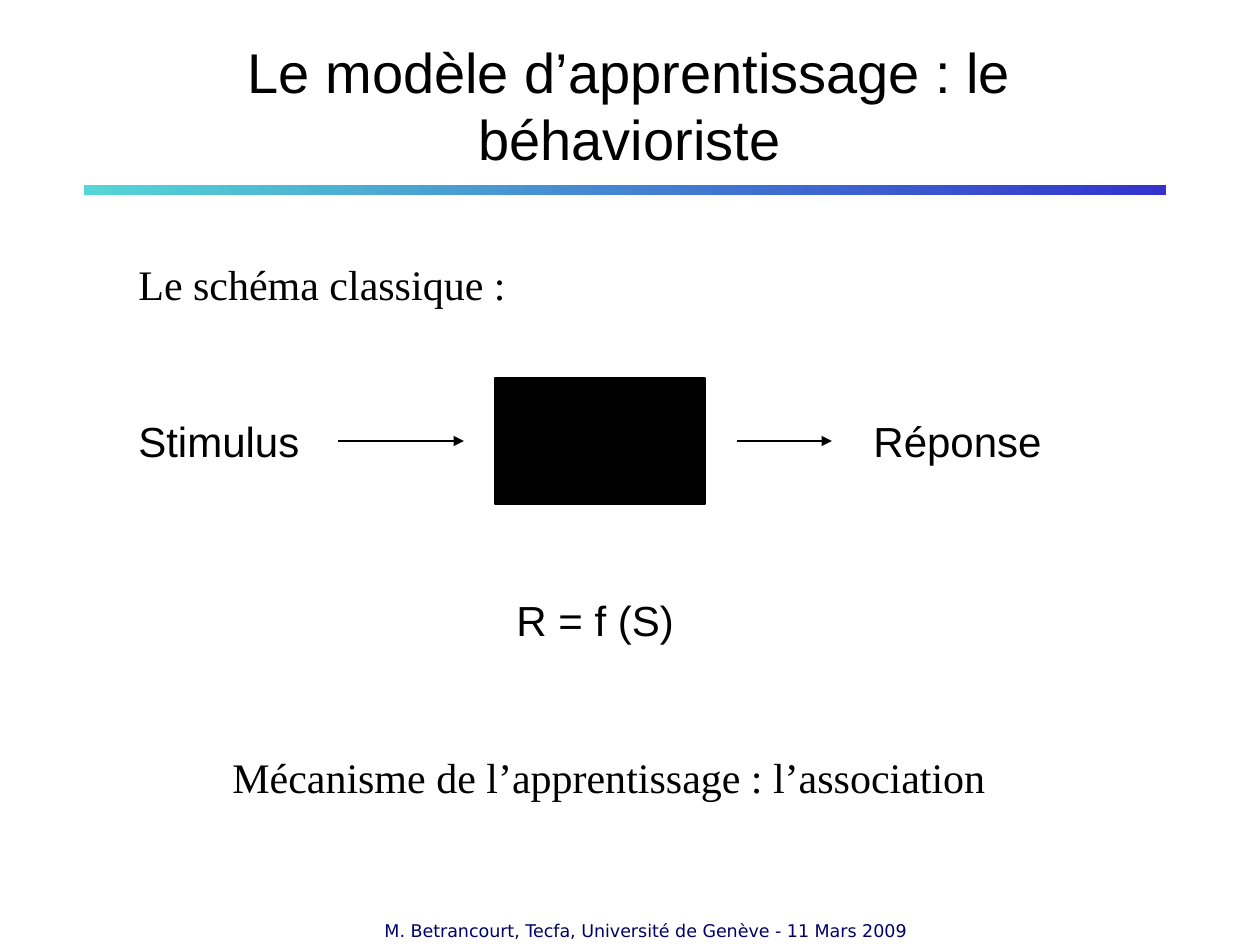
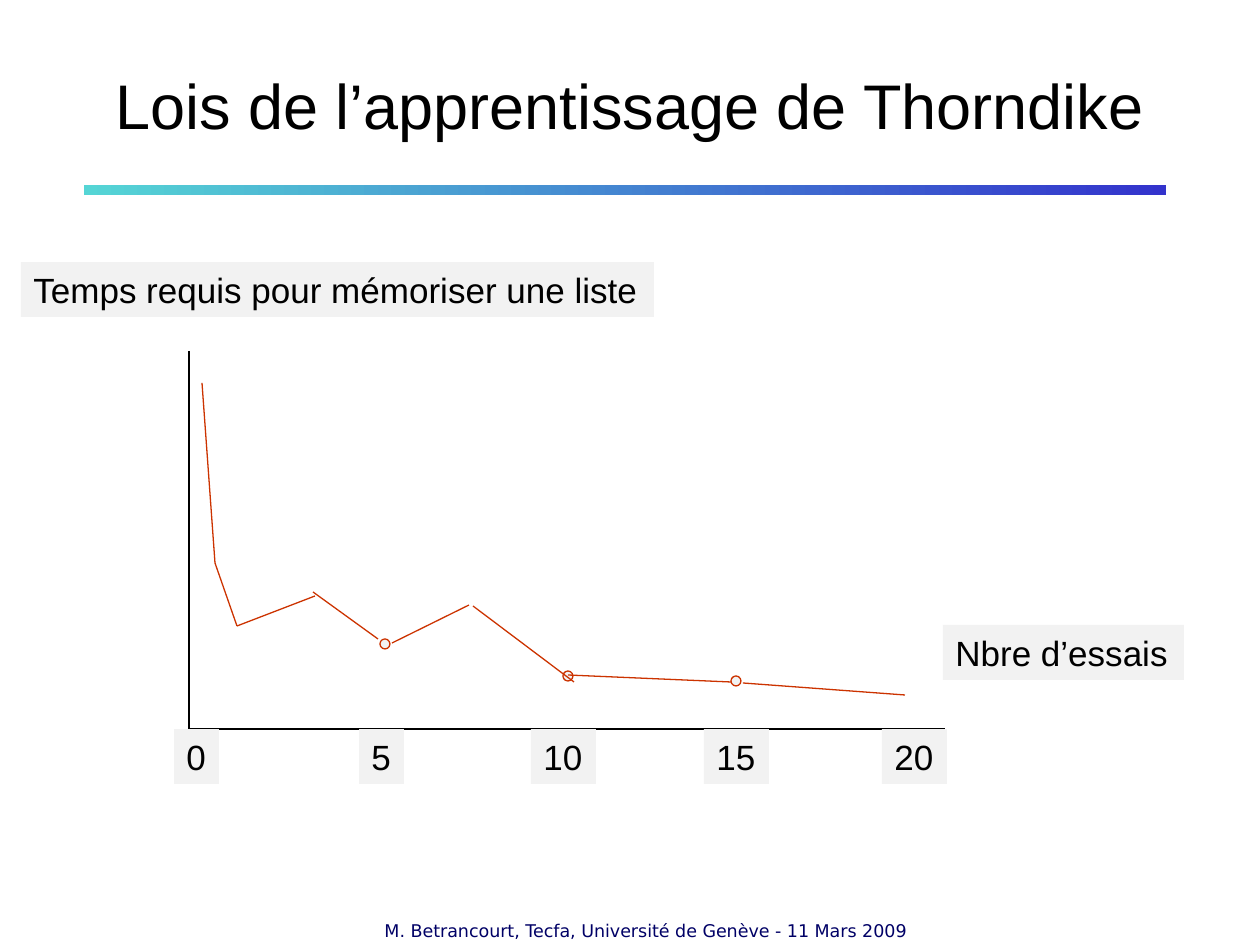
"""Build two slides on the behaviourist model of learning and Thorndike's curve."""
from dataclasses import dataclass

from lxml.etree import SubElement
from pptx import Presentation
from pptx.dml.color import RGBColor
from pptx.enum.shapes import MSO_CONNECTOR as Connector, MSO_SHAPE as Shape
from pptx.enum.text import MSO_ANCHOR as Anchor, MSO_AUTO_SIZE as AutoSize, PP_ALIGN as Align
from pptx.oxml.ns import qn
from pptx.util import Emu, Pt


@dataclass(frozen=True)
class Theme:
    """Colours, fonts and type sizes."""
    ink: str = "000000"
    footer_ink: str = "000066"
    band_start: str = "55D5D5"
    band_end: str = "3333CC"
    label_fill: str = "F2F2F2"
    curve: str = "CC3300"
    sans: str = "Arial"
    serif: str = "Times New Roman"
    footer_font: str = "DejaVu Sans"
    body_size: int = 24
    label_size: int = 20
    footer_size: int = 10
    line_width: float = 0.75


THEME = Theme()
PX_PER_INCH = 126
SLIDE_SIZE = (1260, 945)

FOOTER = "M. Betrancourt, Tecfa, Université de Genève - 11 Mars 2009"
FOOTER_BOX = (357, 914, 577, 53)
TITLE_BOX = (94, 26, 1071, 157)
BAND_BOX = (84, 185, 1082, 10)

MODEL_TITLE = ("Le modèle d’apprentissage : le béhavioriste", 32)
MODEL_TEXTS = [
    ("Le schéma classique :", (126, 252, 400, 63), THEME.serif),
    ("Stimulus", (126, 409, 190, 63), THEME.sans),
    ("Réponse", (861, 409, 198, 63), THEME.sans),
    ("R = f (S)", (504, 588, 187, 63), THEME.sans),
    ("Mécanisme de l’apprentissage : l’association", (220, 745, 792, 63), THEME.serif),
]
BLACK_BOX = (495, 378, 210, 126)
MODEL_ARROWS = [((338, 441), (464, 441)), ((737, 441), (832, 441))]

LAW_TITLE = ("Lois de l’apprentissage de Thorndike", 36)
ORIGIN, AXIS_TOP, AXIS_RIGHT = (189, 729), (189, 351), (945, 729)
LABEL_HEIGHT = 55
AXIS_TITLES = [
    ("Temps requis pour mémoriser une liste", (21, 262, 633, LABEL_HEIGHT)),
    ("Nbre d’essais", (943, 625, 241, LABEL_HEIGHT)),
]
TICKS = [("0", 174), ("5", 359), ("10", 531), ("15", 704), ("20", 882)]
TICK_WIDTHS = {1: 45, 2: 65}
RING_SIZE = 10
TRIAL_RINGS = [(385, 644), (568, 676), (736, 681)]
CURVE_STROKES = [
    [(202, 383), (215, 563), (237, 626), (315, 596)],
    [(313, 592), (378, 639)],
    [(392, 643), (469, 605)],
    [(473, 606), (574, 682)],
    [(568, 675), (731, 682)],
    [(743, 683), (905, 695)],
]


def px(*lengths):
    """Turn pixels into EMU."""
    return [Emu(round(length * 914400 / PX_PER_INCH)) for length in lengths]


def rgb(colour):
    """Turn a hex string into a colour."""
    return RGBColor.from_string(colour)


def add_text(slide, text, box, size, font=THEME.sans, colour=THEME.ink,
             align=Align.LEFT, wrap=False, anchor=Anchor.TOP):
    """Add a one-paragraph text box that grows unless it wraps."""
    shape = slide.shapes.add_textbox(*px(*box))
    frame = shape.text_frame
    frame.word_wrap = wrap
    frame.auto_size = AutoSize.NONE if wrap else AutoSize.SHAPE_TO_FIT_TEXT
    frame.vertical_anchor = anchor
    paragraph = frame.paragraphs[0]
    paragraph.text = text
    paragraph.alignment = align
    paragraph.font.size = Pt(size)
    paragraph.font.name = font
    paragraph.font.color.rgb = rgb(colour)
    return shape


def add_label(slide, text, box):
    """Add a text on a pale ground."""
    label = add_text(slide, text, box, THEME.label_size)
    label.fill.solid()
    label.fill.fore_color.rgb = rgb(THEME.label_fill)


def add_outlined(slide, kind, box, fill, line):
    """Add a filled preset shape with a thin outline."""
    shape = slide.shapes.add_shape(kind, *px(*box))
    shape.shadow.inherit = False
    shape.fill.solid()
    shape.fill.fore_color.rgb = rgb(fill)
    shape.line.color.rgb = rgb(line)
    shape.line.width = Pt(THEME.line_width)


def add_line(slide, start, end, colour=THEME.ink, arrow=False):
    """Add a straight line, with an arrowhead at its end if asked."""
    line = slide.shapes.add_connector(Connector.STRAIGHT, *px(*start, *end))
    line.line.color.rgb = rgb(colour)
    line.line.width = Pt(THEME.line_width)
    if arrow:
        SubElement(line.line._get_or_add_ln(), qn("a:tailEnd"), type="triangle")
    SubElement(line._element.spPr, qn("a:effectLst"))


def add_slide(presentation, title, title_size):
    """Add a slide with the shared band, footer and title."""
    slide = presentation.slides.add_slide(presentation.slide_layouts[6])
    band = slide.shapes.add_shape(Shape.RECTANGLE, *px(*BAND_BOX))
    band.shadow.inherit = False
    band.line.fill.background()
    band.fill.gradient()
    band.fill.gradient_angle = 0
    for stop, colour in zip(band.fill.gradient_stops, (THEME.band_start, THEME.band_end)):
        stop.color.rgb = rgb(colour)
    add_text(slide, FOOTER, FOOTER_BOX, THEME.footer_size, THEME.footer_font,
             THEME.footer_ink, Align.CENTER, wrap=True)
    add_text(slide, title, TITLE_BOX, title_size, align=Align.CENTER,
             wrap=True, anchor=Anchor.MIDDLE)
    return slide


def build_model(presentation):
    """Draw stimulus, black box and response."""
    slide = add_slide(presentation, *MODEL_TITLE)
    for text, box, font in MODEL_TEXTS:
        add_text(slide, text, box, THEME.body_size, font)
    add_outlined(slide, Shape.RECTANGLE, BLACK_BOX, THEME.ink, THEME.ink)
    for start, end in MODEL_ARROWS:
        add_line(slide, start, end, arrow=True)


def build_law(presentation):
    """Draw the learning curve on its axes."""
    slide = add_slide(presentation, *LAW_TITLE)
    add_line(slide, AXIS_TOP, ORIGIN)
    add_line(slide, ORIGIN, AXIS_RIGHT)
    for text, box in AXIS_TITLES:
        add_label(slide, text, box)
    for text, left in TICKS:
        add_label(slide, text, (left, ORIGIN[1], TICK_WIDTHS[len(text)], LABEL_HEIGHT))
    for x, y in TRIAL_RINGS:
        box = (x - RING_SIZE / 2, y - RING_SIZE / 2, RING_SIZE, RING_SIZE)
        add_outlined(slide, Shape.OVAL, box, THEME.label_fill, THEME.curve)
    for stroke in CURVE_STROKES:
        for start, end in zip(stroke, stroke[1:]):
            add_line(slide, start, end, THEME.curve)


def main():
    """Build and save the presentation."""
    presentation = Presentation()
    presentation.slide_width, presentation.slide_height = px(*SLIDE_SIZE)
    build_model(presentation)
    build_law(presentation)
    presentation.save("out.pptx")


if __name__ == "__main__":
    main()
